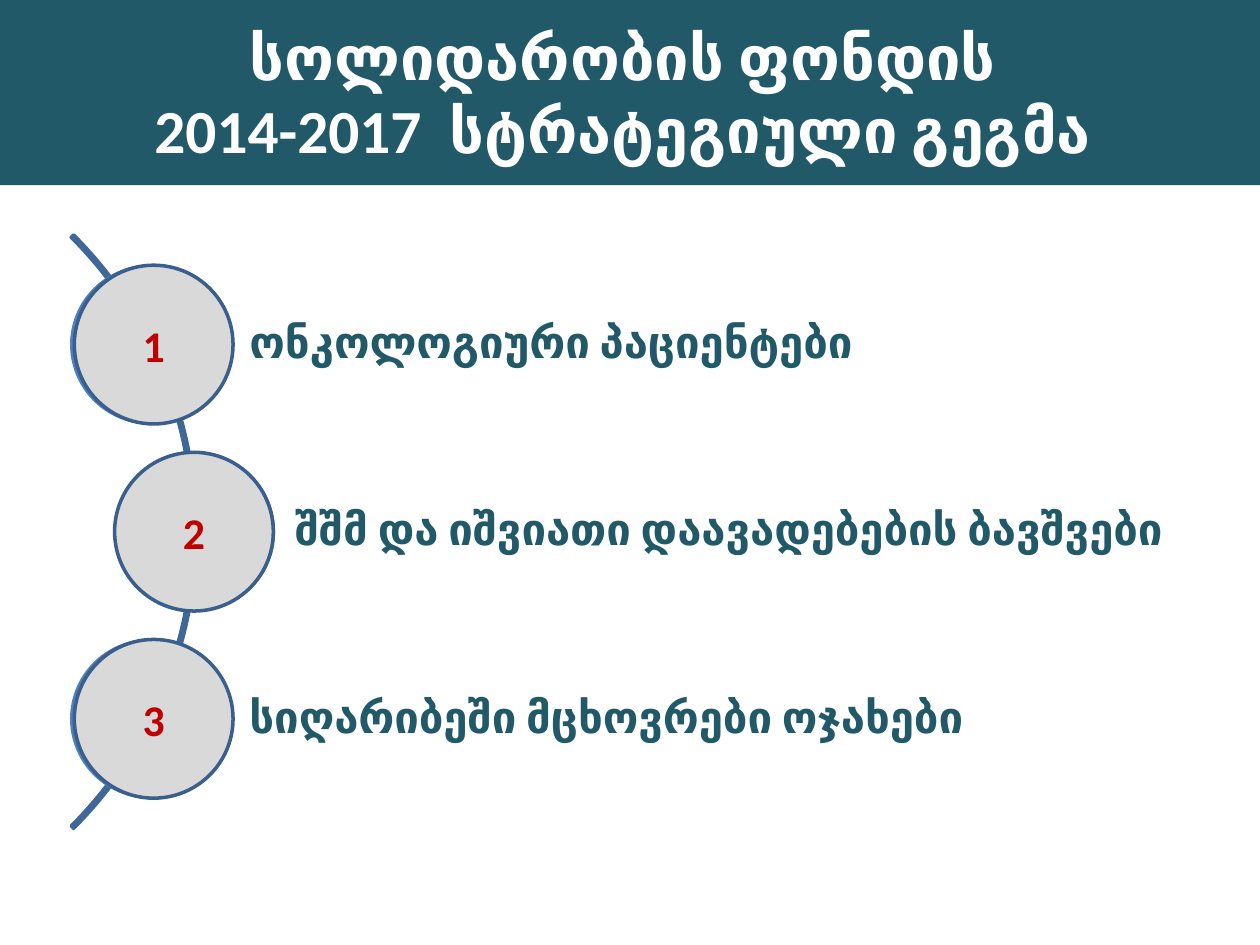
from pptx import Presentation
from pptx.dml.color import RGBColor
from pptx.enum.shapes import MSO_SHAPE
from pptx.enum.text import MSO_ANCHOR, PP_ALIGN
from pptx.util import Inches, Pt

TEAL, WHITE, RED = "215968", "FFFFFF", "C00000"


def add_shape(kind, left, top, width, height, fill=None, line=None):
    shape = slide.shapes.add_shape(
        kind, Inches(left), Inches(top), Inches(width), Inches(height))
    shape.shadow.inherit = False
    if fill:
        shape.fill.solid()
        shape.fill.fore_color.rgb = RGBColor.from_string(fill)
    else:
        shape.fill.background()
    if line:
        shape.line.color.rgb = RGBColor.from_string(line)
        shape.line.width = Pt(2)
    else:
        shape.line.fill.background()
    return shape


def write(shape, text, size, color, align=PP_ALIGN.CENTER):
    frame = shape.text_frame
    frame.word_wrap = True
    frame.vertical_anchor = MSO_ANCHOR.MIDDLE
    paragraph = frame.paragraphs[0]
    paragraph.text = text
    paragraph.alignment = align
    for run in paragraph.runs:
        run.font.name = "Calibri"
        run.font.size = Pt(size)
        run.font.bold = True
        run.font.color.rgb = RGBColor.from_string(color)
    return paragraph


prs = Presentation()
prs.slide_width, prs.slide_height = Inches(10), Inches(7.5)
slide = prs.slides.add_slide(prs.slide_layouts[6])

# Title band
title = add_shape(MSO_SHAPE.RECTANGLE, 0, 0, 10, 1.47, TEAL)
write(title, "სოლიდარობის ფონდის \v2014-2017  სტრატეგიული გეგმა ", 35, WHITE)

# Curve linking the three priorities
curve = add_shape(MSO_SHAPE.BLOCK_ARC, -5.1, 0.89, 6.66, 6.66, line="3F6797")
for index, value in enumerate((189, 27, 0.004)):
    curve.adjustments[index] = value

# Priorities: label, label left, back circle left, number circle left
priorities = [
    ("ონკოლოგიური პაციენტები", 1.19, 0.57, 0.59),
    ("შშმ და იშვიათი დაავადებების ბავშვები", 1.55, 0.93, 0.91),
    ("სიღარიბეში მცხოვრები ოჯახები", 1.19, 0.57, 0.59),
]
first_middle, step, right_edge = 2.735, 1.485, 9.43
label_height, back_size, circle_size = 0.99, 1.24, 1.26

for row, (text, label_left, back_left, circle_left) in enumerate(priorities):
    middle = first_middle + row * step
    label = add_shape(MSO_SHAPE.RECTANGLE, label_left, middle - label_height / 2,
                      right_edge - label_left, label_height, WHITE, WHITE)
    frame = label.text_frame
    frame.margin_left = Inches(0.79)
    frame.margin_top = frame.margin_right = frame.margin_bottom = Inches(0.07)
    write(label, text, 25, TEAL, PP_ALIGN.LEFT).line_spacing = 0.9

    add_shape(MSO_SHAPE.OVAL, back_left, middle - back_size / 2,
              back_size, back_size, WHITE, "4F81BD")

    # Number circle in front
    circle = add_shape(MSO_SHAPE.OVAL, circle_left, middle - circle_size / 2,
                       circle_size, circle_size, "D9D9D9", "3A5F8C")
    write(circle, str(row + 1), 25, RED)

prs.save("out.pptx")
